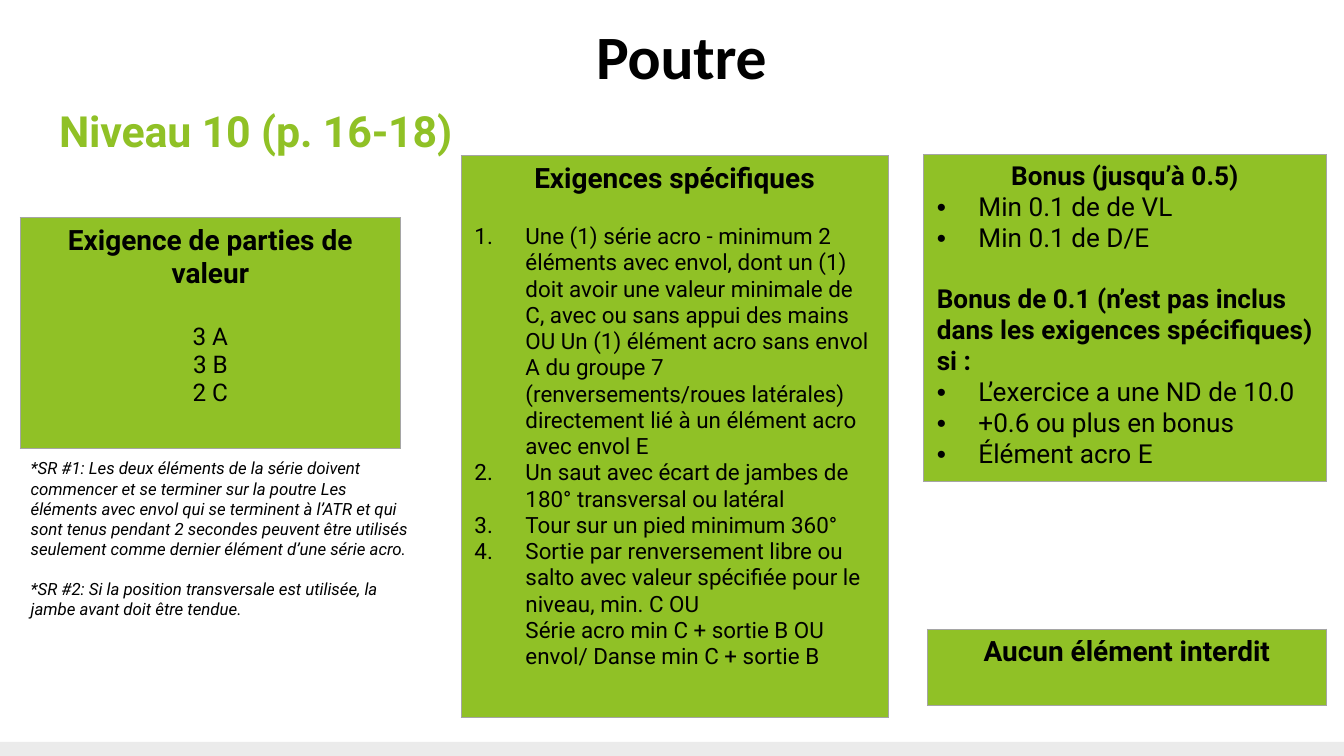
from pptx import Presentation
from pptx.dml.color import RGBColor
from pptx.enum.shapes import MSO_SHAPE
from pptx.enum.text import MSO_ANCHOR, PP_ALIGN
from pptx.oxml.ns import qn
from pptx.util import Inches, Pt
from lxml import etree

GREEN = RGBColor(0x90, 0xC1, 0x26)
BLACK = RGBColor(0, 0, 0)
BORDER = RGBColor(0xA5, 0xA5, 0xA5)
PALE_GRAY = RGBColor(0xEB, 0xEB, 0xEB)
CENTER = PP_ALIGN.CENTER
LEFT = PP_ALIGN.LEFT
MIDDLE = MSO_ANCHOR.MIDDLE
TOP = MSO_ANCHOR.TOP
RECTANGLE = MSO_SHAPE.RECTANGLE
BODY_FONT = "Roboto"
LINE_FACTOR = 1.17
TITLE_ONLY = 5


def place(shape, left, top, width, height):
    shape.left, shape.top = Inches(left), Inches(top)
    shape.width, shape.height = Inches(width), Inches(height)


def set_marker(paragraph, marker, indent):
    properties = paragraph._p.get_or_add_pPr()
    properties.set("marL", str(Inches(indent)))
    properties.set("indent", str(-Inches(indent)))
    if marker == "1.":
        etree.SubElement(properties, qn("a:buAutoNum"), type="arabicPeriod")
    else:
        etree.SubElement(properties, qn("a:buFont"), typeface="Arial")
        etree.SubElement(properties, qn("a:buChar"), char=marker)


def write(paragraph, text, size, bold=False, italic=False, color=BLACK,
          font=BODY_FONT, align=LEFT, gap=0, marker=None, indent=0, spacing=None):
    paragraph.text = text
    paragraph.alignment = align
    paragraph.space_before = Pt(round(gap * LINE_FACTOR, 1))
    if marker:
        set_marker(paragraph, marker, indent)
    for run in paragraph.runs:
        run.font.name = font
        run.font.size = Pt(size)
        run.font.bold = bold
        run.font.italic = italic
        run.font.color.rgb = color
        if spacing is not None:
            run._r.get_or_add_rPr().set("spc", str(spacing))


def write_all(text_frame, entries):
    text_frame.word_wrap = True
    for index, (text, style) in enumerate(entries):
        paragraph = text_frame.add_paragraph() if index else text_frame.paragraphs[0]
        write(paragraph, text, **style)


def remove_margins(text_frame):
    text_frame.margin_left = text_frame.margin_right = 0
    text_frame.margin_top = text_frame.margin_bottom = 0


def add_title(slide, text):
    title = slide.shapes.title
    place(title, 0.47, 0.18, 9.2, 0.45)
    remove_margins(title.text_frame)
    title.text_frame.vertical_anchor = MIDDLE
    style = dict(size=33, bold=True, font="Calibri", align=CENTER, spacing=-10)
    write_all(title.text_frame, [(text, style)])


def add_text(slide, box, entries):
    shape = slide.shapes.add_textbox(*map(Inches, box))
    shape.text_frame.vertical_anchor = TOP
    write_all(shape.text_frame, entries)
    return shape


def add_borders(cell):
    properties = cell._tc.get_or_add_tcPr()
    for side in ("lnL", "lnR", "lnT", "lnB"):
        line = etree.SubElement(properties, qn(f"a:{side}"), w=str(Pt(0.5)))
        fill = etree.SubElement(line, qn("a:solidFill"))
        etree.SubElement(fill, qn("a:srgbClr"), val=str(BORDER))


def add_panel(slide, box, entries):
    table = slide.shapes.add_table(1, 1, *map(Inches, box)).table
    table.first_row = False
    table.horz_banding = False
    cell = table.cell(0, 0)
    add_borders(cell)
    cell.fill.solid()
    cell.fill.fore_color.rgb = GREEN
    write_all(cell.text_frame, entries)


def add_footer_bar(slide):
    bar = slide.shapes.add_shape(
        RECTANGLE, Inches(0), Inches(5.52), Inches(10), Inches(0.11))
    bar.shadow.inherit = False
    bar.fill.solid()
    bar.fill.fore_color.rgb = PALE_GRAY
    bar.line.fill.background()


def main():
    presentation = Presentation()
    presentation.slide_width = Inches(10)
    presentation.slide_height = presentation.slide_width * 9 // 16
    slide = presentation.slides.add_slide(presentation.slide_layouts[TITLE_ONLY])

    heading = dict(size=15, bold=True, align=CENTER)
    value = dict(size=13, align=CENTER)
    numbered = dict(size=12, marker="1.", indent=0.38)
    bullet = dict(size=14, marker="•", indent=0.31)
    note = dict(size=9, italic=True)

    add_footer_bar(slide)
    add_title(slide, "Poutre")
    level = add_text(slide, (0.44, 0.78, 9.27, 0.39), [
        ("Niveau 10 (p. 16-18)", dict(size=23, bold=True, color=GREEN, spacing=-10)),
    ])
    remove_margins(level.text_frame)

    add_panel(slide, (0.15, 1.62, 2.83, 1.72), [
        ("Exigence de parties de valeur", heading),
        ("3 A", dict(value, gap=15)),
        ("3 B", value),
        ("2 C", value),
    ])
    add_panel(slide, (3.43, 1.16, 3.18, 4.18), [
        ("Exigences spécifiques", heading),
        ("Une (1) série acro - minimum 2 éléments avec envol, dont un (1) doit avoir "
         "une valeur minimale de C, avec ou sans appui des mains OU Un (1) élément "
         "acro sans envol A du groupe 7 (renversements/roues latérales) directement "
         "lié à un élément acro avec envol E", dict(numbered, gap=13)),
        ("Un saut avec écart de jambes de 180° transversal ou latéral", numbered),
        ("Tour sur un pied minimum 360°", numbered),
        ("Sortie par renversement libre ou salto avec valeur spécifiée pour le niveau, "
         "min. C OU \nSérie acro min C + sortie B OU\nenvol/ Danse min C + sortie B",
         numbered),
    ])
    add_panel(slide, (6.9, 4.68, 2.97, 0.57), [("Aucun élément interdit", heading)])
    add_text(slide, (0.13, 3.36, 3.04, 1.46), [
        ("*SR #1: Les deux éléments de la série doivent commencer et se terminer sur "
         "la poutre Les éléments avec envol qui se terminent à l’ATR et qui sont tenus "
         "pendant 2 secondes peuvent être utilisés seulement comme dernier élément "
         "d’une série acro.", note),
        ("*SR #2: Si la position transversale est utilisée, la jambe avant doit être "
         "tendue.", dict(note, gap=9)),
    ])
    add_panel(slide, (6.87, 1.15, 3, 2.43), [
        ("Bonus (jusqu’à 0.5)", dict(heading, size=14)),
        ("Min 0.1 de de VL", bullet),
        ("Min 0.1 de D/E", bullet),
        ("Bonus de 0.1 (n’est pas inclus dans les exigences spécifiques) si :",
         dict(size=14, bold=True, gap=14)),
        ("L’exercice a une ND de 10.0", bullet),
        ("+0.6 ou plus en bonus", bullet),
        ("Élément acro E", bullet),
    ])
    presentation.save("out.pptx")


if __name__ == "__main__":
    main()
